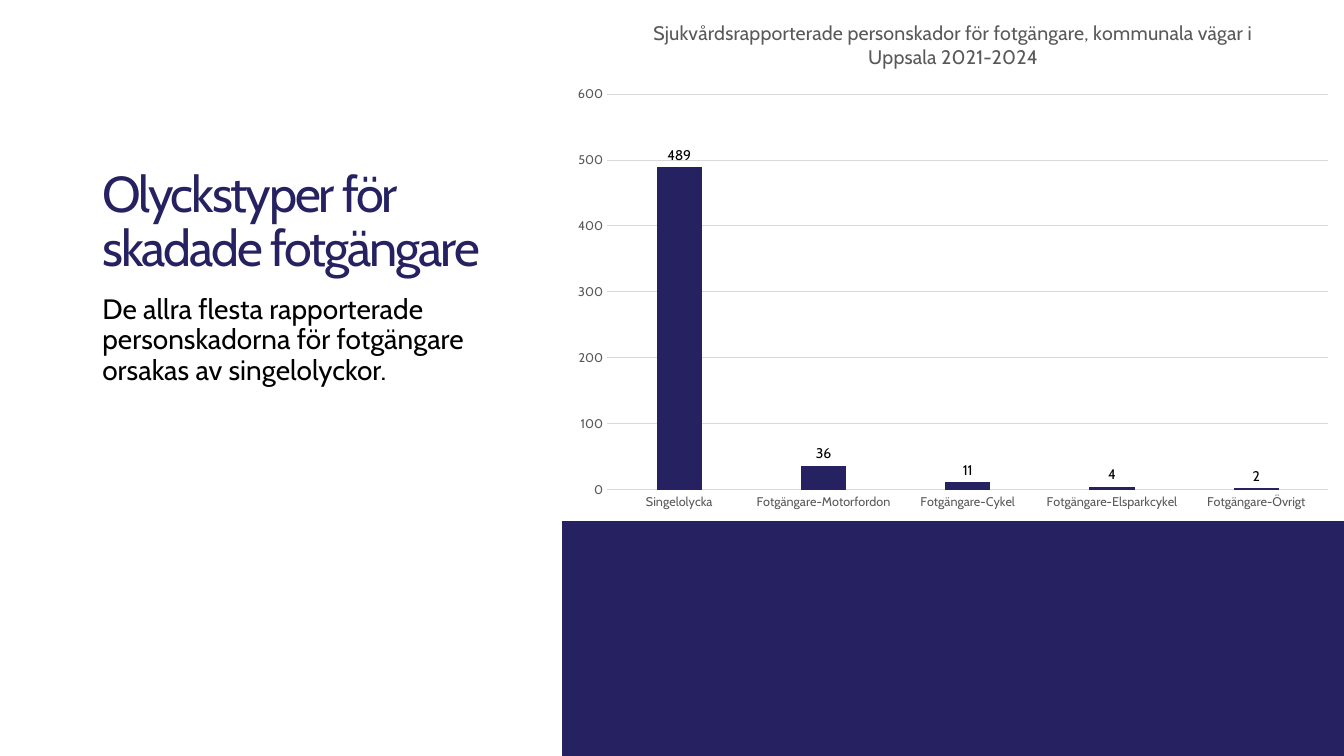
from pptx import Presentation
from pptx.chart.data import CategoryChartData
from pptx.dml.color import RGBColor
from pptx.enum.chart import XL_CHART_TYPE, XL_LABEL_POSITION, XL_TICK_MARK
from pptx.enum.shapes import MSO_SHAPE
from pptx.enum.text import MSO_ANCHOR
from pptx.util import Cm, Pt


def style(font, size, color):
    font.name = "Cabin"
    font.size = Pt(size)
    font.bold = False
    font.color.rgb = RGBColor.from_string(color)


def add_text(top, height, text, size, color, anchor):
    box = slide.shapes.add_textbox(Cm(2.33), Cm(top), Cm(10.65), Cm(height))
    frame = box.text_frame
    frame.word_wrap = True
    frame.vertical_anchor = anchor
    frame.text = text
    para = frame.paragraphs[0]
    para.line_spacing = 0.9
    style(para.runs[0].font, size, color)
    return para.runs[0]


deck = Presentation()
deck.slide_width = Cm(33.87)
deck.slide_height = Cm(19.05)
slide = deck.slides.add_slide(deck.slide_layouts[6])

panel = slide.shapes.add_shape(
    MSO_SHAPE.RECTANGLE, Cm(14.17), Cm(13.13), Cm(19.7), Cm(5.92))
panel.shadow.inherit = False
panel.fill.solid()
panel.fill.fore_color.rgb = RGBColor.from_string("262262")
panel.line.fill.background()

title = add_text(3.12, 4, "Olyckstyper för skadade fotgängare",
                 36, "262261", MSO_ANCHOR.BOTTOM)
title.font._element.set("spc", "-150")
add_text(7.32, 9.83, "De allra flesta rapporterade personskadorna för "
         "fotgängare orsakas av singelolyckor.", 20, "000000", MSO_ANCHOR.TOP)

data = CategoryChartData()
data.categories = ["Singelolycka", "Fotgängare-Motorfordon", "Fotgängare-Cykel",
                   "Fotgängare-Elsparkcykel", "Fotgängare-Övrigt"]
data.add_series("Personskador", [489, 36, 11, 4, 2])
chart = slide.shapes.add_chart(
    XL_CHART_TYPE.COLUMN_CLUSTERED, Cm(14.17), Cm(0), Cm(19.7), Cm(13.1), data).chart
style(chart.font, 10, "000000")
chart.has_legend = False
chart.has_title = True
head = chart.chart_title.text_frame
head.text = ("Sjukvårdsrapporterade personskador för fotgängare, "
             "kommunala vägar i Uppsala 2021-2024")
style(head.paragraphs[0].runs[0].font, 14, "595959")

for axis in (chart.category_axis, chart.value_axis):
    axis.major_tick_mark = XL_TICK_MARK.NONE
    axis.minor_tick_mark = XL_TICK_MARK.NONE
    style(axis.tick_labels.font, 9, "595959")
chart.value_axis.minimum_scale = 0
chart.value_axis.maximum_scale = 600
chart.value_axis.major_unit = 100
chart.value_axis.format.line.fill.background()
for line in (chart.category_axis.format.line,
             chart.value_axis.major_gridlines.format.line):
    line.color.rgb = RGBColor.from_string("D9D9D9")
    line.width = Pt(0.75)

plot = chart.plots[0]
plot.gap_width = 219
plot.overlap = -27
plot.vary_by_categories = False
bars = plot.series[0]
bars.format.fill.solid()
bars.format.fill.fore_color.rgb = RGBColor.from_string("262261")
labels = bars.data_labels
labels.show_value = True
labels.position = XL_LABEL_POSITION.OUTSIDE_END
style(labels.font, 10, "000000")

deck.save("out.pptx")
